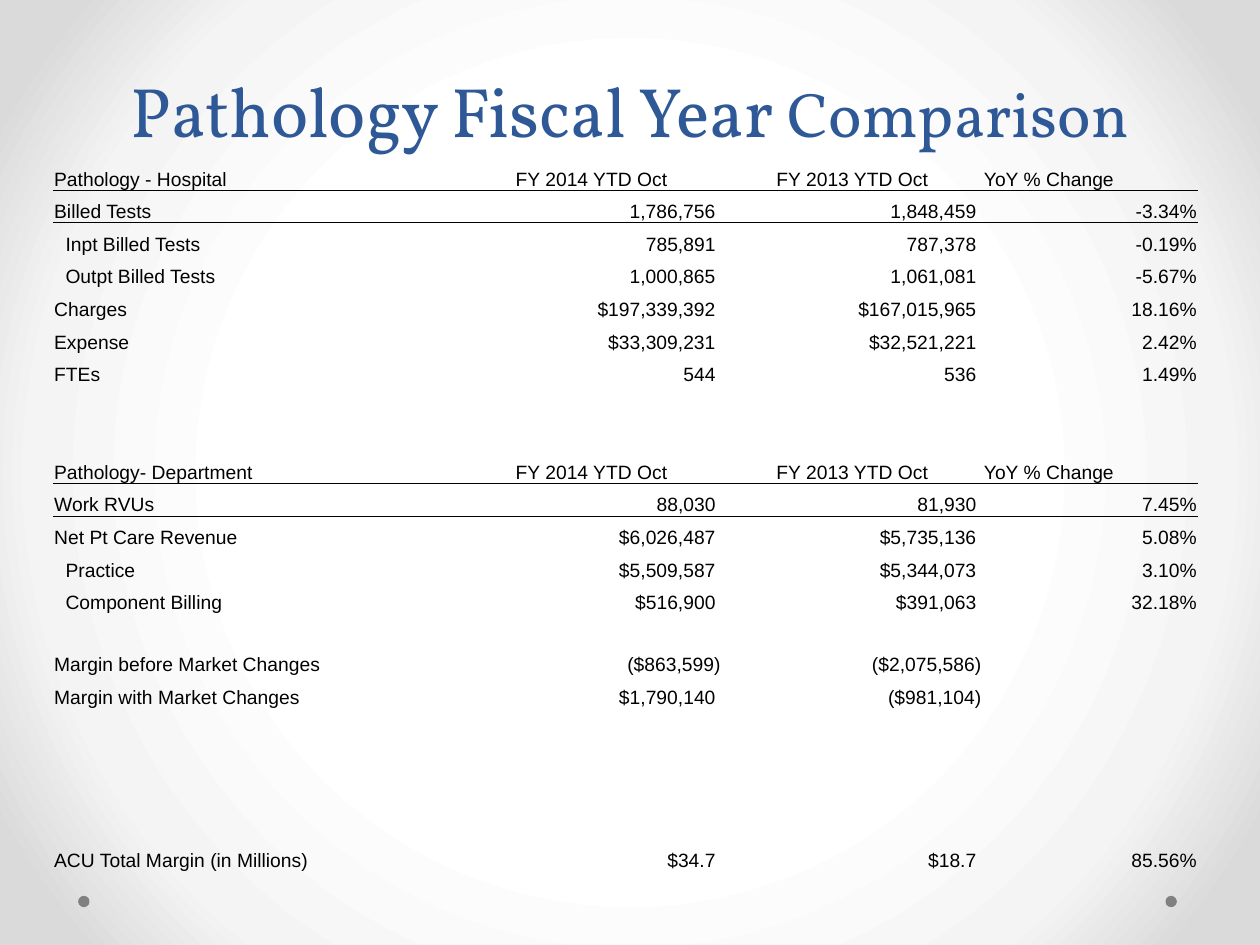
from pptx import Presentation
from pptx.dml.color import RGBColor
from pptx.enum.shapes import MSO_SHAPE
from pptx.enum.text import MSO_ANCHOR, PP_ALIGN
from pptx.oxml import parse_xml
from pptx.oxml.ns import nsdecls
from pptx.util import Inches, Pt

COLORS = {"title": "2F5897", "text": "000000", "dot": "808080"}
BACKGROUND_STOPS = [(50, "FFFFFF"), (76, "F4F4F4"), (92, "DADADA")]
NO_GRID_STYLE = "{2D5ABB26-0587-4C30-8999-92F81FD0307C}"
FONT_SIZE = 11

HEADINGS = ["FY 2014 YTD Oct", "FY 2013 YTD Oct", "YoY % Change"]
HEADER_ROWS = (0, 9)
INDENTED_ROWS = (2, 3, 12, 13)
TALL_ROW = 14
ROWS = [
    ["Pathology - Hospital", *HEADINGS],
    ["Billed Tests", "1,786,756", "1,848,459", "-3.34%"],
    ["Inpt Billed Tests", "785,891", "787,378", "-0.19%"],
    ["Outpt Billed Tests", "1,000,865", "1,061,081", "-5.67%"],
    ["Charges", "$197,339,392", "$167,015,965", "18.16%"],
    ["Expense", "$33,309,231", "$32,521,221", "2.42%"],
    ["FTEs", "544", "536", "1.49%"],
    *[[""] * 4] * 2,
    ["Pathology- Department", *HEADINGS],
    ["Work RVUs", "88,030", "81,930", "7.45%"],
    ["Net Pt Care Revenue", "$6,026,487", "$5,735,136", "5.08%"],
    ["Practice", "$5,509,587", "$5,344,073", "3.10%"],
    ["Component Billing", "$516,900", "$391,063", "32.18%"],
    ["Margin before Market Changes", "($863,599)", "($2,075,586)", ""],
    ["Margin with Market Changes", "$1,790,140", "($981,104)", ""],
    *[[""] * 4] * 4,
    ["ACU Total Margin (in Millions)", "$34.7", "$18.7", "85.56%"],
]


def add_text(paragraph, text, *, size, font, color, align=PP_ALIGN.LEFT):
    paragraph.alignment = align
    run = paragraph.add_run()
    run.text = text
    run.font.size = Pt(size)
    run.font.name = font
    run.font.color.rgb = RGBColor.from_string(color)


def add_border(cell, side):
    cell._tc.get_or_add_tcPr().insert(0, parse_xml(
        f'<a:{side} {nsdecls("a")} w="6350"><a:solidFill>'
        f'<a:srgbClr val="{COLORS["text"]}"/></a:solidFill></a:{side}>'))


presentation = Presentation()
presentation.slide_width = Inches(10)
presentation.slide_height = Inches(7.5)
slide = presentation.slides.add_slide(presentation.slide_layouts[6])

# Radial background
stops = "".join(f'<a:gs pos="{position * 1000}"><a:srgbClr val="{color}"/></a:gs>'
                for position, color in BACKGROUND_STOPS)
slide.background.fill.gradient()
gradient = slide.element.xpath("./p:cSld/p:bg/p:bgPr/a:gradFill")[0]
gradient.getparent().replace(gradient, parse_xml(
    f'<a:gradFill {nsdecls("a")} rotWithShape="1"><a:gsLst>{stops}</a:gsLst>'
    '<a:path path="circle"><a:fillToRect l="50000" t="50000" r="50000" b="50000"/>'
    '</a:path></a:gradFill>'))

# Footer dots
for left in (9.25, 0.62):
    dot = slide.shapes.add_shape(
        MSO_SHAPE.OVAL, Inches(left), Inches(7.11), Inches(0.09), Inches(0.09))
    dot.shadow.inherit = False
    dot.fill.solid()
    dot.fill.fore_color.rgb = RGBColor.from_string(COLORS["dot"])
    dot.line.fill.background()

# Title
title = slide.shapes.add_textbox(Inches(0.5), Inches(-0.5), Inches(9), Inches(1.75))
title.text_frame.word_wrap = True
title.text_frame.vertical_anchor = MSO_ANCHOR.BOTTOM
paragraph = title.text_frame.paragraphs[0]
paragraph.line_spacing = Pt(58)
for text, size in (("Pathology Fiscal Year ", 40), ("Comparison", 36)):
    add_text(paragraph, text, size=size, font="Vollkorn", color=COLORS["title"],
             align=PP_ALIGN.CENTER)

# Comparison table
table_shape = slide.shapes.add_table(
    len(ROWS), 4, Inches(0.42), Inches(1.25), Inches(9.08), Inches(5.67))
table = table_shape.table
table.first_row = table.horz_banding = False
table_shape.element.xpath(".//a:tableStyleId")[0].text = NO_GRID_STYLE
for column, width in zip(table.columns, (3.24, 2.07, 2.07, 1.71)):
    column.width = Inches(width)

row_height = (5.67 - 0.49) / (len(ROWS) - 1)
for row_index, values in enumerate(ROWS):
    is_header = row_index in HEADER_ROWS
    table.rows[row_index].height = Inches(0.49 if row_index == TALL_ROW else row_height)
    for column_index, value in enumerate(values):
        cell = table.cell(row_index, column_index)
        cell.fill.background()
        cell.vertical_anchor = MSO_ANCHOR.BOTTOM
        cell.margin_left = cell.margin_right = cell.margin_top = Inches(0.01)
        cell.margin_bottom = 0
        if is_header:
            add_border(cell, "lnB")
        elif row_index - 1 in HEADER_ROWS:
            add_border(cell, "lnT")

        align = PP_ALIGN.LEFT
        if is_header and column_index in (1, 2):
            align = PP_ALIGN.CENTER
        elif not is_header and column_index > 0:
            align = PP_ALIGN.RIGHT
            # Closing parentheses hang to the right of the digits
            if column_index < 3 and not value.endswith(")"):
                cell.margin_right = Inches(0.05)
        elif row_index in INDENTED_ROWS:
            cell.margin_left = Inches(0.1)

        paragraph = cell.text_frame.paragraphs[0]
        if value:
            add_text(paragraph, value, size=FONT_SIZE, font="Arial",
                     color=COLORS["text"], align=align)
        else:
            # Small end mark keeps an empty row from growing
            paragraph._p.append(parse_xml(
                f'<a:endParaRPr {nsdecls("a")} sz="{FONT_SIZE * 100}"/>'))

presentation.save("out.pptx")
